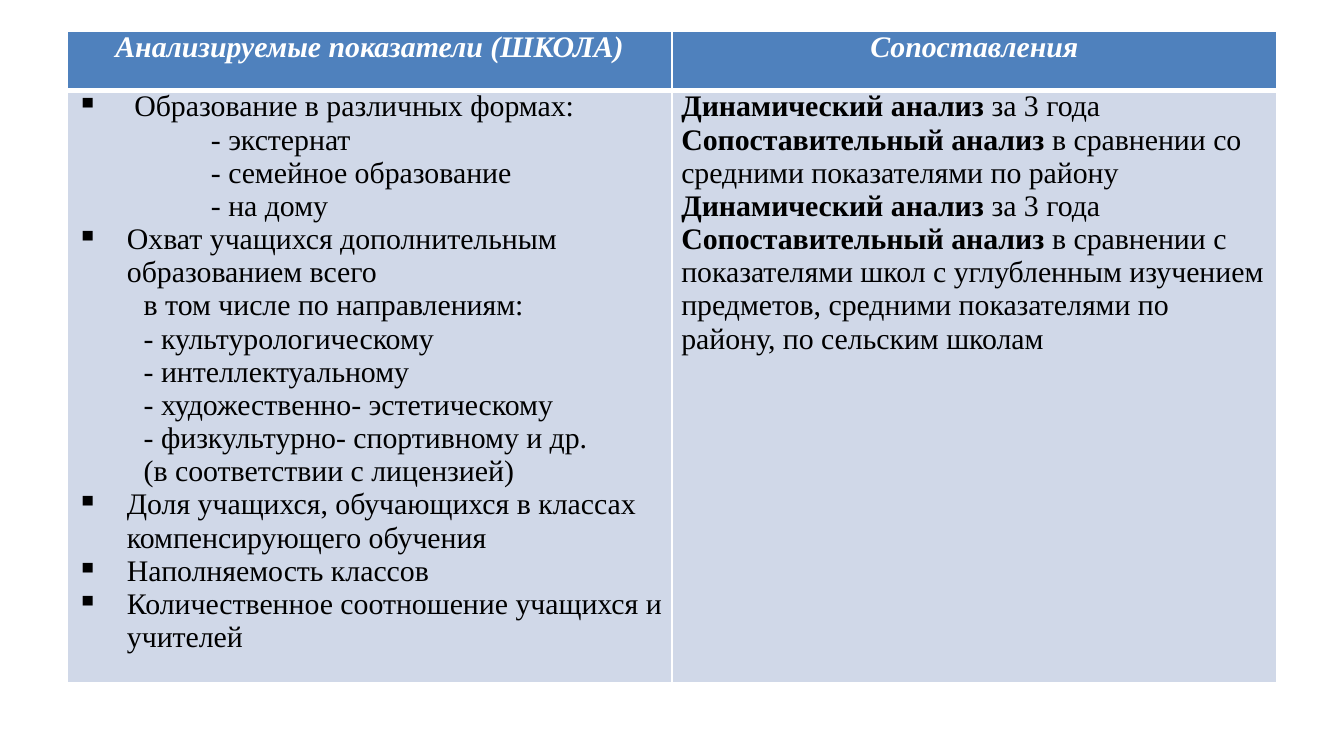
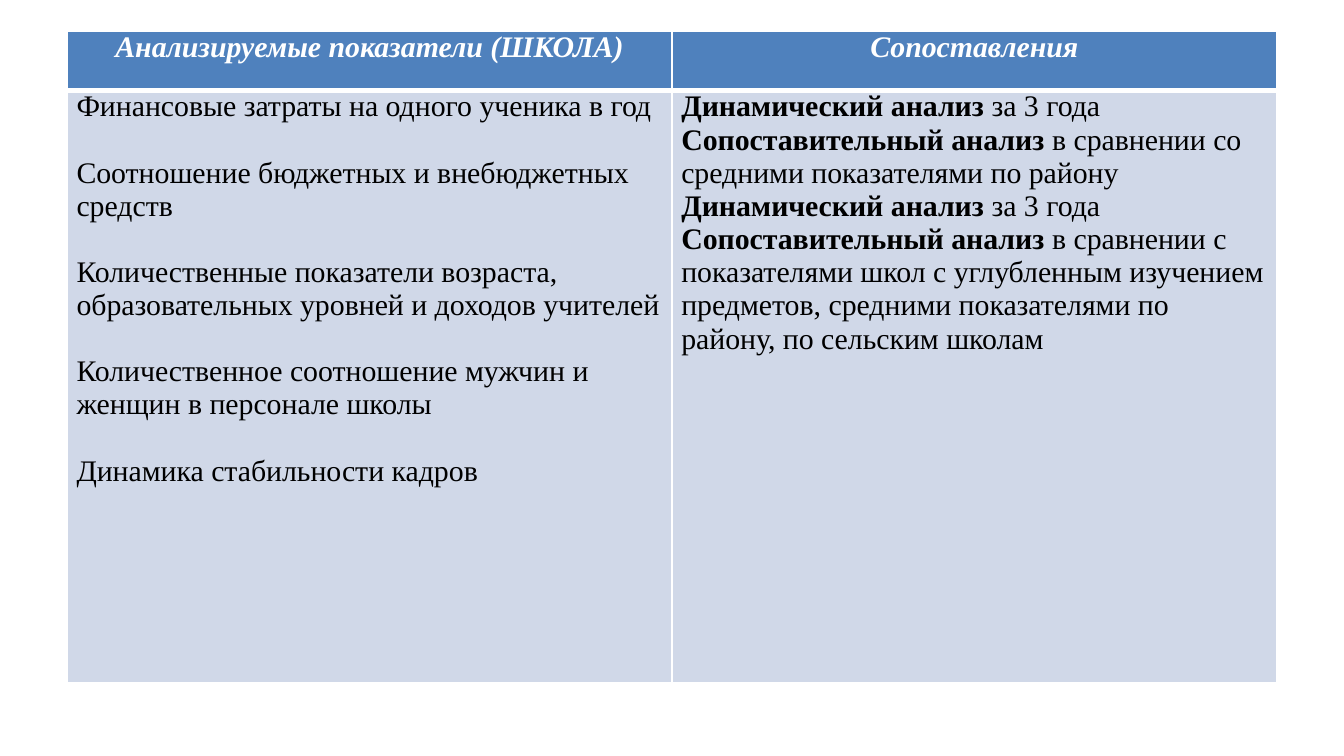
from lxml import etree
from pptx import Presentation
from pptx.dml.color import RGBColor
from pptx.enum.text import PP_ALIGN
from pptx.oxml.ns import qn
from pptx.util import Pt

CENTER = PP_ALIGN.CENTER
WHITE = RGBColor(0xFF, 0xFF, 0xFF)
BLACK = RGBColor(0x00, 0x00, 0x00)
HEADER_BLUE = RGBColor(0x4F, 0x81, 0xBD)
BODY_BLUE = RGBColor(0xD0, 0xD8, 0xE8)
FONT = "Times New Roman"
FONT_SIZE = Pt(16)
LINE_GAP = Pt(17.7)

TABLE_BOX = (Pt(36), Pt(16.6), Pt(648), Pt(349.2))
HEADER_HEIGHT = Pt(31.7)
CELL_INSET = Pt(5)
THIN, THICK = Pt(1), Pt(3)

# Paragraph kinds: (left margin, first-line indent)
BULLET, DEEP, NESTED, PLAIN = "bullet", "deep", "nested", "plain"
INDENTS = {
    BULLET: (Pt(27), Pt(-27)),
    DEEP: (Pt(36), Pt(36)),
    NESTED: (Pt(36), Pt(0)),
    PLAIN: (Pt(0), Pt(0)),
}
TAB_STOP = Pt(36)

HEADINGS = ("Анализируемые показатели (ШКОЛА)", "Сопоставления")
EDUCATION_INDICATORS = [
    (BULLET, " Образование в различных формах:"),
    (DEEP, "- экстернат"),
    (DEEP, "- семейное образование"),
    (DEEP, "- на дому"),
    (BULLET, "Охват учащихся дополнительным образованием всего"),
    (NESTED, "в том числе по направлениям:"),
    (NESTED, "- культурологическому"),
    (NESTED, "- интеллектуальному"),
    (NESTED, "- художественно- эстетическому"),
    (NESTED, "- физкультурно- спортивному и др."),
    (NESTED, "(в соответствии с лицензией)"),
    (BULLET, "Доля учащихся, обучающихся в классах компенсирующего обучения"),
    (BULLET, "Наполняемость классов"),
    (BULLET, "Количественное соотношение учащихся и учителей"),
]
RESOURCE_INDICATORS = [
    (PLAIN, "Финансовые затраты на одного ученика в год"),
    (PLAIN, "Соотношение бюджетных и внебюджетных средств"),
    (PLAIN, "Количественные показатели возраста, образовательных уровней и доходов учителей"),
    (PLAIN, "Количественное соотношение мужчин и женщин в персонале школы"),
    (PLAIN, "Динамика стабильности кадров"),
]
DYNAMIC = ("Динамический анализ", " за 3 года")
COMPARATIVE = "Сопоставительный анализ"
COMPARISONS = [
    DYNAMIC,
    (COMPARATIVE, " в сравнении со средними показателями по району"),
    DYNAMIC,
    (COMPARATIVE, " в сравнении с показателями школ с углубленным изучением "
                  "предметов, средними показателями по району, по сельским школам"),
]


def style_run(run, color, bold=False, italic=False):
    run.font.name = FONT
    run.font.size = FONT_SIZE
    run.font.color.rgb = color
    run.font.bold = bold
    run.font.italic = italic


def style_cell(cell, color, top, bottom):
    """Set the insets, white borders and fill of a cell."""
    cell.margin_left = cell.margin_right = CELL_INSET
    cell.margin_top = cell.margin_bottom = 0
    properties = cell._tc.get_or_add_tcPr()
    for side, width in (("L", THIN), ("R", THIN), ("T", top), ("B", bottom)):
        border = etree.SubElement(properties, qn(f"a:ln{side}"), w=str(width))
        paint = etree.SubElement(border, qn("a:solidFill"))
        etree.SubElement(paint, qn("a:srgbClr"), val=str(WHITE))
    cell.fill.solid()
    cell.fill.fore_color.rgb = color


def next_paragraph(frame, index):
    return frame.add_paragraph() if index else frame.paragraphs[0]


def indent_paragraph(paragraph, kind):
    margin, indent = INDENTS[kind]
    properties = paragraph._p.get_or_add_pPr()
    properties.set("marL", str(margin))
    properties.set("indent", str(indent))
    if kind == BULLET:
        etree.SubElement(properties, qn("a:buChar"), char="▪")
        tabs = etree.SubElement(properties, qn("a:tabLst"))
        etree.SubElement(tabs, qn("a:tab"), pos=str(TAB_STOP), algn="l")
    else:
        etree.SubElement(properties, qn("a:buNone"))


def fill_heading(cell, heading):
    style_cell(cell, HEADER_BLUE, THIN, THICK)
    cell.text_frame.text = heading
    paragraph = cell.text_frame.paragraphs[0]
    paragraph.alignment = CENTER
    style_run(paragraph.runs[0], WHITE, bold=True, italic=True)


def fill_indicators(cell, indicators, gap):
    style_cell(cell, BODY_BLUE, THICK, THIN)
    for index, (kind, indicator) in enumerate(indicators):
        paragraph = next_paragraph(cell.text_frame, index)
        paragraph.text = indicator
        paragraph.space_before = gap if index else Pt(0)
        indent_paragraph(paragraph, kind)
        style_run(paragraph.runs[0], BLACK)


def fill_comparisons(cell):
    style_cell(cell, BODY_BLUE, THICK, THIN)
    for index, (method, scope) in enumerate(COMPARISONS):
        paragraph = next_paragraph(cell.text_frame, index)
        paragraph.text = method
        style_run(paragraph.runs[0], BLACK, bold=True)
        scope_run = paragraph.add_run()
        scope_run.text = scope
        style_run(scope_run, BLACK)


def add_indicator_slide(deck, box, indicators, gap):
    """Add a slide with the two-column table of indicators and comparisons."""
    slide = deck.slides.add_slide(deck.slide_layouts[6])
    left, top, width, height = box
    table = slide.shapes.add_table(2, 2, left, top, width, height).table
    table.horz_banding = False
    for column in table.columns:
        column.width = width // 2
    table.rows[0].height = HEADER_HEIGHT
    table.rows[1].height = height - HEADER_HEIGHT

    # Header row
    for column_index, heading in enumerate(HEADINGS):
        fill_heading(table.cell(0, column_index), heading)

    # Body row
    fill_indicators(table.cell(1, 0), indicators, gap)
    fill_comparisons(table.cell(1, 1))


def main():
    deck = Presentation()
    deck.slide_width, deck.slide_height = Pt(720), Pt(405)
    add_indicator_slide(deck, TABLE_BOX, EDUCATION_INDICATORS, Pt(0))
    add_indicator_slide(deck, TABLE_BOX, RESOURCE_INDICATORS, LINE_GAP)
    deck.save("out.pptx")


if __name__ == "__main__":
    main()
